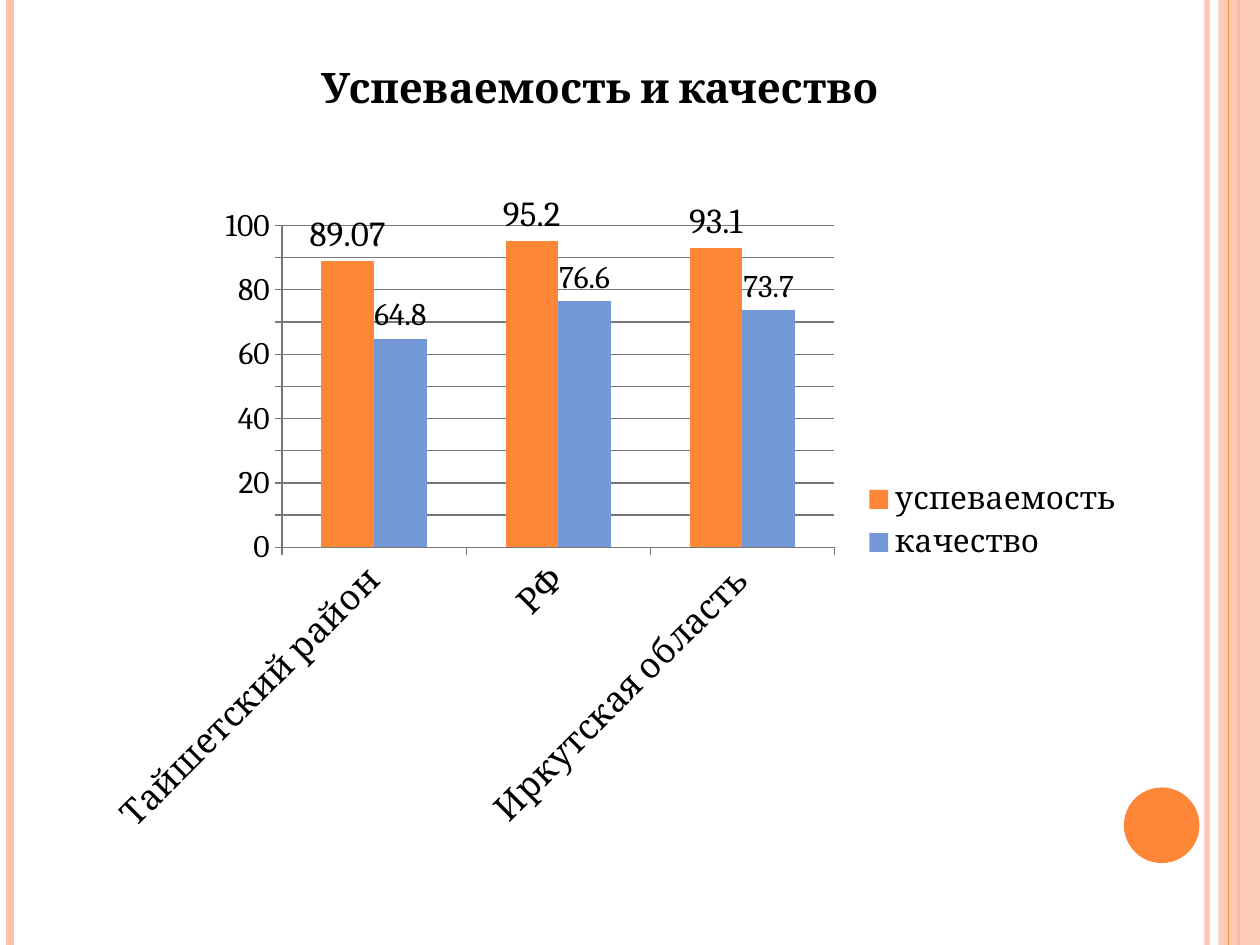
import pptx
import pptx.chart.data
import pptx.dml.color
import pptx.enum.chart
import pptx.enum.shapes
import pptx.enum.text
import pptx.oxml
import pptx.oxml.ns
import pptx.util
from pptx.util import Inches

FONT = "Cambria"
ORANGE, PEACH, BLUE, GREY, BLACK = "FE8637", "FEC3AE", "7598D9", "787878", "000000"


def paint(target, color, alpha=None):
    """Give a fill or a line one solid colour, with alpha in percent."""
    fill = getattr(target, "fill", target)
    fill.solid()
    fill.fore_color.rgb = pptx.dml.color.RGBColor.from_string(color)
    if alpha:
        clr = fill._xPr.find(".//" + pptx.oxml.ns.qn("a:srgbClr"))
        pptx.oxml.ns.qn("a:alpha")
        etree_alpha = clr.makeelement(pptx.oxml.ns.qn("a:alpha"), {"val": str(alpha * 1000)})
        clr.append(etree_alpha)


def add_text(slide, text, left, top, width, height, size, bold=False, color=BLACK):
    tf = slide.shapes.add_textbox(Inches(left), Inches(top), Inches(width), Inches(height)).text_frame
    tf.word_wrap = True
    p = tf.paragraphs[0]
    p.alignment = pptx.enum.text.PP_ALIGN.CENTER
    p.space_before = pptx.util.Pt(6)
    r = p.add_run()
    r.text = text
    r.font.name, r.font.size, r.font.bold = FONT, pptx.util.Pt(size), bold
    paint(r.font, color)


prs = pptx.Presentation()
prs.slide_width, prs.slide_height = Inches(10), Inches(7.5)
s = prs.slides.add_slide(prs.slide_layouts[6])

# Side stripes, the band on the right and the disc, from back to front
RECT = pptx.enum.shapes.MSO_SHAPE.RECTANGLE
OVAL = pptx.enum.shapes.MSO_SHAPE.OVAL
decor = [
    ("stripe", 9.58, PEACH, 3, 93),
    ("stripe", 0.08, PEACH, 4.5, None),
    ("stripe", 9.83, ORANGE, 1.5, None),
    (RECT, (9.67, 0, 0.33, 7.5), PEACH, None, 87),
    ("stripe", 9.75, ORANGE, 0.75, None),
    (OVAL, (8.92, 6.25, 0.6, 0.6), ORANGE, None, None),
]
for kind, place, color, weight, alpha in decor:
    if kind == "stripe":
        line = s.shapes.add_connector(pptx.enum.shapes.MSO_CONNECTOR.STRAIGHT,
                                      Inches(place), 0, Inches(place), Inches(7.5))
        line.line.width = pptx.util.Pt(weight)
        paint(line.line, color, alpha)
        line._element.spPr.append(pptx.oxml.parse_xml(
            "<a:effectLst %s/>" % pptx.oxml.ns.nsdecls("a")))
    else:
        sp = s.shapes.add_shape(kind, *[Inches(v) for v in place])
        sp.shadow.inherit = False
        sp.line.fill.background()
        paint(sp.fill, color, alpha)

add_text(s, "Успеваемость и качество", 0.5, 0.44, 8.52, 6.64, size=24, bold=True)

# Clustered column chart
data = pptx.chart.data.CategoryChartData()
data.categories = ["Тайшетский район", "РФ", "Иркутская область"]
data.add_series("успеваемость", [89.07, 95.2, 93.1])
data.add_series("качество ", [64.8, 76.6, 73.7])
chart = s.shapes.add_chart(pptx.enum.chart.XL_CHART_TYPE.COLUMN_CLUSTERED, Inches(0.75),
                           Inches(1.53), Inches(8.27), Inches(5.21), data).chart
chart.has_title = False
chart.font.name, chart.font.size = FONT, pptx.util.Pt(18)
paint(chart.font, BLACK)
chart.has_legend = True
chart.legend.position = pptx.enum.chart.XL_LEGEND_POSITION.RIGHT
chart.legend.include_in_layout = False

plot = chart.plots[0]
plot.gap_width, plot.overlap, plot.vary_by_categories = 150, 0, False
for series, color, size in zip(plot.series, (ORANGE, BLUE), (20, 18)):
    paint(series.format, color)
    labels = series.data_labels
    labels.show_value = True
    labels.position = pptx.enum.chart.XL_LABEL_POSITION.OUTSIDE_END
    labels.font.name, labels.font.size = FONT, pptx.util.Pt(size)
    paint(labels.font, BLACK)

cat, val = chart.category_axis, chart.value_axis
val.minimum_scale, val.maximum_scale, val.major_unit = 0, 100, 10
val.has_major_gridlines = True
for axis, size in ((cat, 20), (val, 18)):
    axis.major_tick_mark = pptx.enum.chart.XL_TICK_MARK.OUTSIDE
    axis.tick_labels.font.name = FONT
    axis.tick_labels.font.size = pptx.util.Pt(size)
    paint(axis.tick_labels.font, BLACK)
for part in (cat, val, val.major_gridlines):
    paint(part.format.line, GREY)

# Slanted category names and a fixed inner plot area
cat._element.txPr.bodyPr.set("rot", "-2700000")
area = chart._chartSpace.chart.plotArea
for old in area.findall(pptx.oxml.ns.qn("c:layout")):
    area.remove(old)
area.insert(0, pptx.oxml.parse_xml(
    "<c:layout %s><c:manualLayout><c:layoutTarget val='inner'/>"
    "<c:xMode val='edge'/><c:yMode val='edge'/><c:x val='0.18'/><c:y val='0.05'/>"
    "<c:w val='0.53'/><c:h val='0.49'/></c:manualLayout></c:layout>"
    % pptx.oxml.ns.nsdecls("c")))

prs.save("out.pptx")
